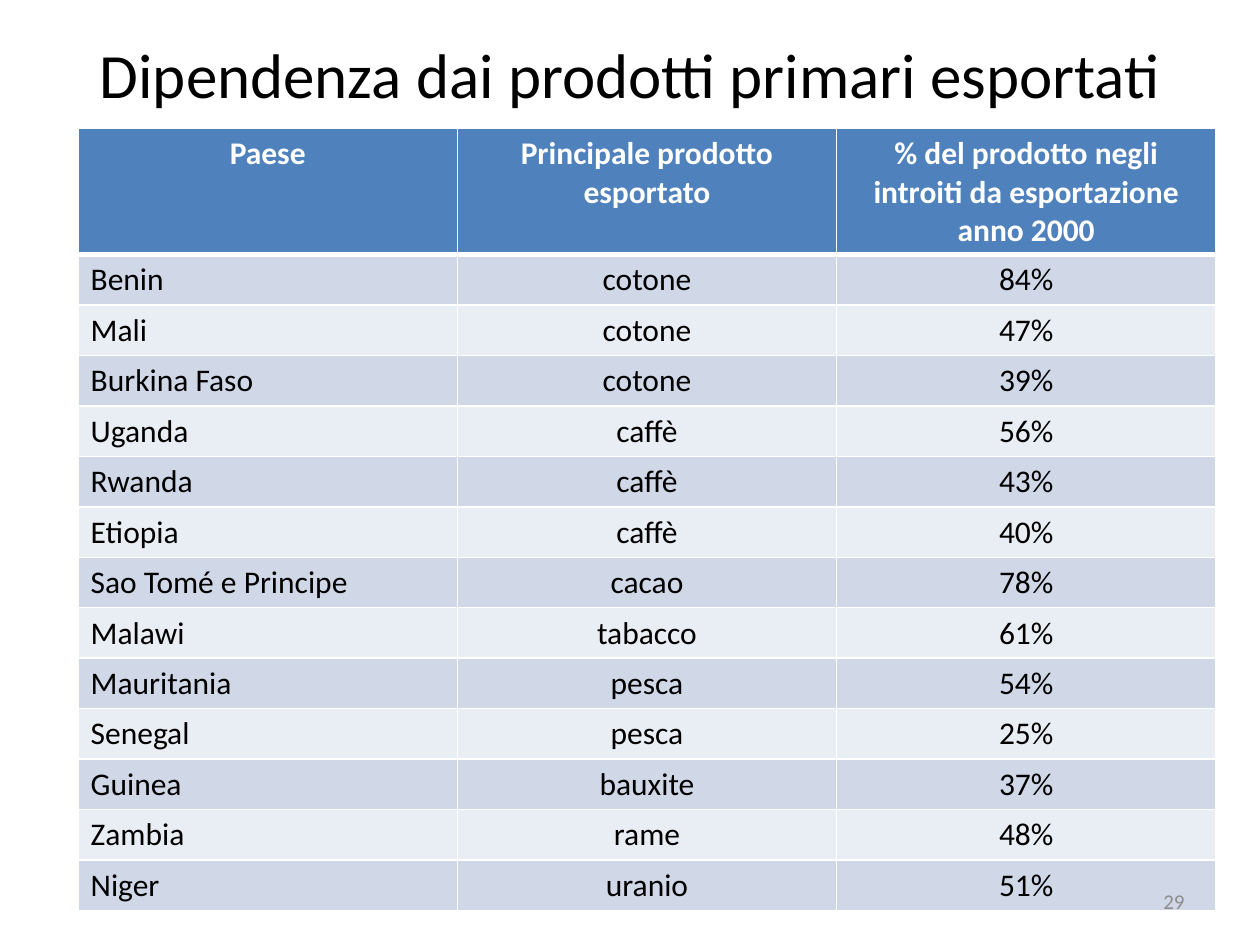
from typing import NamedTuple

from lxml.etree import SubElement
from pptx import Presentation
from pptx.dml.color import RGBColor
from pptx.enum.text import MSO_ANCHOR, PP_ALIGN
from pptx.oxml.ns import qn
from pptx.util import Inches, Pt

FONT = "Calibri"
COLORS = {
    "text": "000000",
    "header": "4F81BD",
    "white": "FFFFFF",
    "band_dark": "D0D8E8",
    "band_light": "E9EDF4",
    "page_number": "8C8C8C",
}


class Export(NamedTuple):
    country: str
    product: str
    share: str


HEADER = Export(
    "Paese",
    "Principale prodotto esportato",
    "% del prodotto negli introiti da esportazione anno 2000",
)
EXPORTS = [
    Export("Benin", "cotone", "84%"),
    Export("Mali", "cotone", "47%"),
    Export("Burkina Faso", "cotone", "39%"),
    Export("Uganda", "caffè", "56%"),
    Export("Rwanda", "caffè", "43%"),
    Export("Etiopia", "caffè", "40%"),
    Export("Sao Tomé e Principe", "cacao", "78%"),
    Export("Malawi", "tabacco", "61%"),
    Export("Mauritania", "pesca", "54%"),
    Export("Senegal", "pesca", "25%"),
    Export("Guinea", "bauxite", "37%"),
    Export("Zambia", "rame", "48%"),
    Export("Niger", "uranio", "51%"),
]


def write(tf, text: str, size: int, color: str, align, bold: bool = False) -> None:
    p = tf.paragraphs[0]
    p.text = text
    p.alignment = align
    p.font.name = FONT
    p.font.size = Pt(size)
    p.font.bold = bold
    p.font.color.rgb = RGBColor.from_string(COLORS[color])


def add_text(slide, box: tuple, text: str, size: int, color: str, align) -> None:
    tf = slide.shapes.add_textbox(*map(Inches, box)).text_frame
    tf.word_wrap = True
    tf.vertical_anchor = MSO_ANCHOR.MIDDLE
    write(tf, text, size, color, align)


def set_borders(cell, bottom: int) -> None:
    tc_pr = cell._tc.get_or_add_tcPr()
    for side, width in (("L", 1), ("R", 1), ("T", 1), ("B", bottom)):
        ln = SubElement(tc_pr, qn(f"a:ln{side}"), w=str(Pt(width)))
        fill = SubElement(ln, qn("a:solidFill"))
        SubElement(fill, qn("a:srgbClr"), val=COLORS["white"])


def add_export_table(slide) -> None:
    rows = [HEADER, *EXPORTS]
    frame = slide.shapes.add_table(
        len(rows), len(HEADER), Inches(0.62), Inches(1.02), Inches(9.03), Inches(6.2)
    )
    table = frame.table
    for column in table.columns:
        column.width = Inches(3.01)
    for i, export in enumerate(rows):
        is_header = i == 0
        table.rows[i].height = Inches(1 if is_header else 0.4)
        band = "header" if is_header else "band_dark" if i % 2 else "band_light"
        for j, text in enumerate(export):
            cell = table.cell(i, j)
            left = j == 0 and not is_header
            write(
                cell.text_frame, text, 18, "white" if is_header else "text",
                PP_ALIGN.LEFT if left else PP_ALIGN.CENTER, bold=is_header,
            )
            # Borders come before the fill in the cell properties
            set_borders(cell, bottom=3 if is_header else 1)
            cell.fill.solid()
            cell.fill.fore_color.rgb = RGBColor.from_string(COLORS[band])


def main() -> None:
    prs = Presentation()
    prs.slide_width, prs.slide_height = Inches(10), Inches(7.5)
    s = prs.slides.add_slide(prs.slide_layouts[6])

    # Title
    add_text(s, (0.5, 0.3, 9, 0.56), "Dipendenza dai prodotti primari esportati",
             36, "text", PP_ALIGN.CENTER)
    # Countries and their main exports
    add_export_table(s)
    # Page number
    add_text(s, (7.17, 6.95, 2.33, 0.4), "29", 12, "page_number", PP_ALIGN.RIGHT)

    prs.save("out.pptx")


if __name__ == "__main__":
    main()
